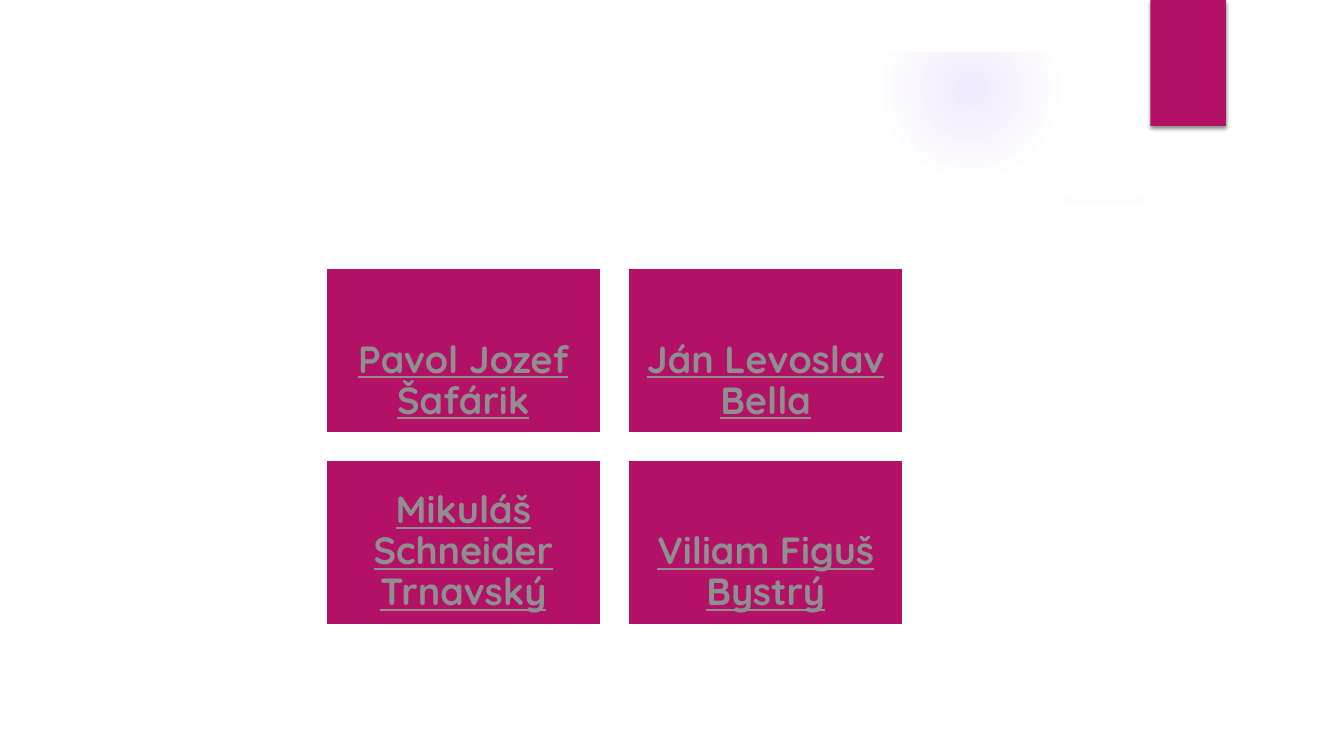
from lxml import etree
from pptx import Presentation
from pptx.dml.color import RGBColor
from pptx.enum.shapes import MSO_SHAPE
from pptx.enum.text import MSO_ANCHOR, PP_ALIGN
from pptx.oxml.ns import qn
from pptx.util import Inches, Pt

RECT, OVAL = MSO_SHAPE.RECTANGLE, MSO_SHAPE.OVAL
BOTTOM, CENTER = MSO_ANCHOR.BOTTOM, PP_ALIGN.CENTER
COLORS = {"paper": "FFFFFF", "magenta": "B31166", "name": "8F8F8F",
          "glow": "9B6BF2", "shadow": "000000"}
FONT = "Quicksand"

GLOWS = [
    (9.41, 1.83, 3.08, [(0, 7), (36, 6), (69, 0)]),
    (8.75, 0.01, 1.75, [(0, 14), (36, 7), (73, 0)]),
]
PANEL = [(0.5, 2.04), (0.5, 7), (12.84, 7), (12.84, 2.04), (12, 2.17),
         (11.44, 2.24), (10.88, 2.3), (10.32, 2.35), (9.76, 2.39),
         (9.21, 2.42), (8.4, 2.46), (7.08, 2.48), (5.59, 2.46),
         (4.44, 2.41), (3.21, 2.33), (1.87, 2.21), (0.94, 2.1)]
COMPOSERS = ["Pavol Jozef Šafárik", "Ján Levoslav Bella",
             "Mikuláš Schneider Trnavský", "Viliam Figuš Bystrý"]
CARD_LEFT, CARD_TOP, CARD_WIDTH, CARD_HEIGHT = 3.23, 2.66, 2.73, 1.64
COLUMN_STEP, ROW_STEP = 3.0, 1.9


class Deck:
    """Draws styled elements on the current slide."""

    def __init__(self):
        self.presentation = Presentation()
        self.presentation.slide_width = Inches(13.33)
        self.presentation.slide_height = Inches(7.5)
        self.slide = self.presentation.slides.add_slide(
            self.presentation.slide_layouts[6])
        background = self.slide.background.fill
        background.solid()
        background.fore_color.rgb = self.color("paper")

    def color(self, key):
        return RGBColor.from_string(COLORS[key])

    def paint(self, shape, key):
        shape.shadow.inherit = False
        shape.fill.solid()
        shape.fill.fore_color.rgb = self.color(key)
        shape.line.fill.background()
        return shape

    def block(self, kind, left, top, width, height, key):
        shape = self.slide.shapes.add_shape(
            kind, Inches(left), Inches(top), Inches(width), Inches(height))
        return self.paint(shape, key)

    def tint(self, parent, key, alpha):
        color = etree.SubElement(parent, qn("a:srgbClr"), val=COLORS[key])
        etree.SubElement(color, qn("a:alpha"), val=str(alpha * 1000))

    def glow(self, left, top, size, stops):
        disc = self.block(OVAL, left, top, size, size, "glow")
        disc.fill.gradient()
        gradient = disc._element.spPr.find(qn("a:gradFill"))
        for child in list(gradient):
            gradient.remove(child)
        stop_list = etree.SubElement(gradient, qn("a:gsLst"))
        for position, alpha in stops:
            stop = etree.SubElement(stop_list, qn("a:gs"), pos=str(position * 1000))
            self.tint(stop, "glow", alpha)
        radial = etree.SubElement(gradient, qn("a:path"), path="circle")
        etree.SubElement(radial, qn("a:fillToRect"),
                         {side: "50000" for side in "ltrb"})

    def panel(self, points):
        builder = self.slide.shapes.build_freeform(*points[0], scale=Inches(1))
        builder.add_line_segments(points[1:], close=True)
        self.paint(builder.convert_to_shape(), "paper")

    def ribbon(self, left, top, width, height):
        ribbon = self.block(RECT, left, top, width, height, "magenta")
        effects = ribbon._element.spPr.find(qn("a:effectLst"))
        shadow = etree.SubElement(
            effects, qn("a:outerShdw"), blurRad=str(Pt(3)), dist=str(Pt(2)),
            dir="5400000", rotWithShape="0")
        self.tint(shadow, "shadow", 45)

    def card(self, left, top, composer):
        card = self.block(RECT, left, top, CARD_WIDTH, CARD_HEIGHT, "magenta")
        card.line.color.rgb = self.color("paper")
        card.line.width = Pt(1.5)
        frame = card.text_frame
        frame.word_wrap = True
        frame.vertical_anchor = BOTTOM
        frame.margin_left = frame.margin_right = Inches(0.11)
        frame.margin_top = frame.margin_bottom = Inches(0.11)
        paragraph = frame.paragraphs[0]
        paragraph.alignment = CENTER
        paragraph.line_spacing = 0.9
        run = paragraph.add_run()
        run.text = composer
        run.font.name = FONT
        run.font.size = Pt(27)
        run.font.bold = True
        run.font.underline = True
        run.font.color.rgb = self.color("name")


def main():
    deck = Deck()
    for glow in GLOWS:
        deck.glow(*glow)
    deck.panel(PANEL)
    deck.block(RECT, 0, 0, 13.33, 0.52, "paper")
    deck.ribbon(11.41, 0, 0.75, 1.25)
    for index, composer in enumerate(COMPOSERS):
        row, column = divmod(index, 2)
        deck.card(CARD_LEFT + column * COLUMN_STEP,
                  CARD_TOP + row * ROW_STEP, composer)
    deck.presentation.save("out.pptx")


if __name__ == "__main__":
    main()
